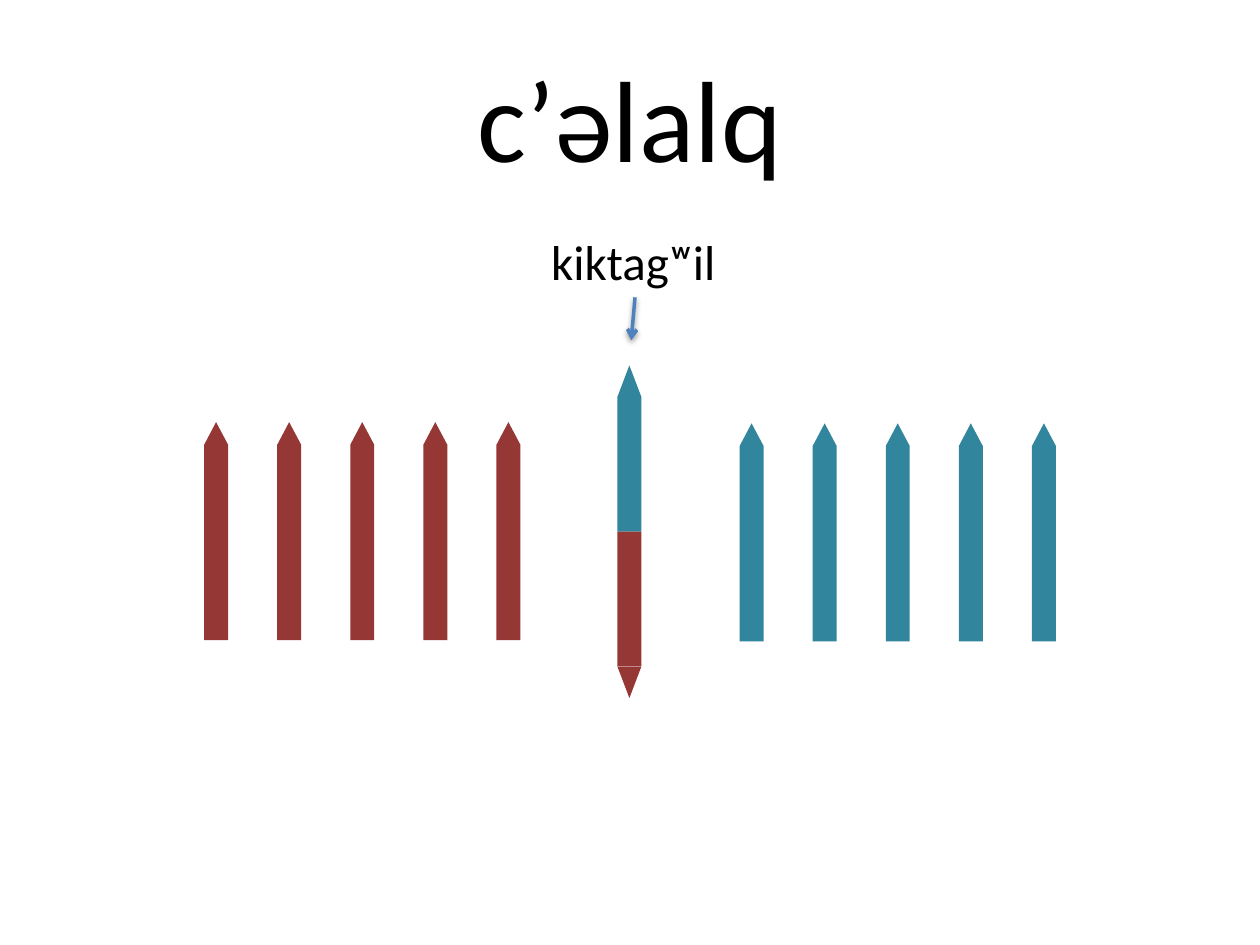
from lxml import etree
from pptx import Presentation
from pptx.dml.color import RGBColor
from pptx.enum.shapes import MSO_CONNECTOR, MSO_SHAPE
from pptx.enum.text import MSO_ANCHOR, PP_ALIGN
from pptx.oxml import parse_xml
from pptx.oxml.ns import nsdecls, qn
from pptx.util import Inches, Pt

RECT, TRIANGLE = MSO_SHAPE.RECTANGLE, MSO_SHAPE.ISOSCELES_TRIANGLE
STRAIGHT = MSO_CONNECTOR.STRAIGHT
CENTER, MIDDLE = PP_ALIGN.CENTER, MSO_ANCHOR.MIDDLE
COLORS = {"red": "953735", "teal": "31859C", "arrow": "4F81BD", "text": "000000"}
FONT = "Calibri"
STICK_W, STICK_PITCH = 0.19, 0.58
STICKS_PER_SIDE = 5


def rgb(name):
    return RGBColor.from_string(COLORS[name])


def inches(box):
    return [Inches(v) for v in box]


def add_text(tf, text, size):
    tf.word_wrap = True
    p = tf.paragraphs[0]
    p.alignment = CENTER
    r = p.add_run()
    r.text = text
    r.font.name, r.font.size = FONT, Pt(size)
    r.font.color.rgb = rgb("text")


def add_part(group, kind, box, color):
    s = group.shapes.add_shape(kind, *inches(box))
    s.fill.solid()
    s.fill.fore_color.rgb = rgb(color)
    s.line.fill.background()
    s.shadow.inherit = False
    return s


def add_stick(group, box, tip, color, down=False):
    """Draw a bar whose pointed tip takes the top, or the bottom if down."""
    x, y, w, h = box
    add_part(group, RECT, (x, y if down else y + tip, w, h - tip), color)
    point = add_part(group, TRIANGLE, (x, y + h - tip if down else y, w, tip), color)
    if down:
        point.rotation = 180


def add_row(s, box, color):
    x, y, w, h = box
    group = s.shapes.add_group_shape()
    for i in range(STICKS_PER_SIDE):
        add_stick(group, (x + i * STICK_PITCH, y, w, h), 0.18, color)


def add_center_stick(s, box):
    x, y, w, h = box
    group = s.shapes.add_group_shape()
    half = h / 2
    add_stick(group, (x, y, w, half), 0.25, "teal")
    add_stick(group, (x, y + half, w, half), 0.25, "red", down=True)


def add_title(s, box):
    title = s.shapes.title
    title.left, title.top, title.width, title.height = inches(box)
    title.text_frame.vertical_anchor = MIDDLE
    add_text(title.text_frame, "c’əlalq", 66)


def add_label(s, box, arrow):
    group = s.shapes.add_group_shape()
    label = group.shapes.add_textbox(*inches(box))
    add_text(label.text_frame, "kiktagʷil", 28)
    line = group.shapes.add_connector(STRAIGHT, *inches(arrow))
    line.line.color.rgb = rgb("arrow")
    line.line.width = Pt(2)
    etree.SubElement(line.line._get_or_add_ln(), qn("a:tailEnd"), type="arrow")
    line._element.spPr.append(parse_xml(
        f'<a:effectLst {nsdecls("a")}>'
        '<a:outerShdw blurRad="40000" dist="20000" dir="5400000" rotWithShape="0">'
        f'<a:srgbClr val="{COLORS["text"]}"><a:alpha val="38000"/></a:srgbClr>'
        '</a:outerShdw></a:effectLst>'))


def main():
    prs = Presentation()
    prs.slide_width, prs.slide_height = Inches(10), Inches(7.5)
    s = prs.slides.add_slide(prs.slide_layouts[5])
    add_row(s, (1.62, 3.35, STICK_W, 1.73), "red")
    add_row(s, (5.87, 3.36, STICK_W, 1.73), "teal")
    add_center_stick(s, (4.9, 2.9, STICK_W, 2.64))
    add_title(s, (0.5, 0.3, 9, 1.25))
    add_label(s, (3.77, 1.79, 2.51, 0.57), (5.04, 2.36, 5.01, 2.7))
    prs.save("out.pptx")


if __name__ == "__main__":
    main()
